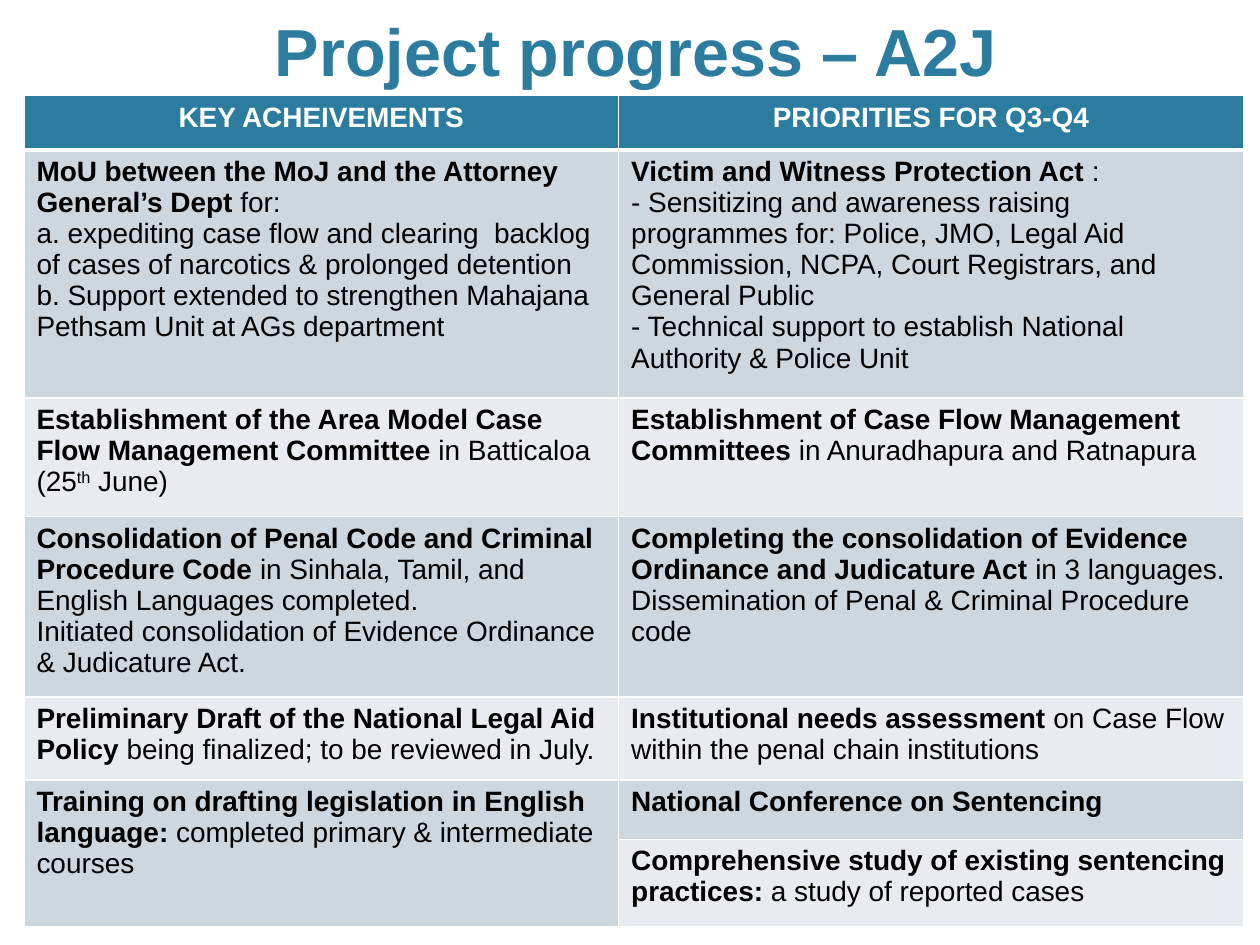
from collections import namedtuple

from lxml.etree import SubElement
from pptx import Presentation
from pptx.dml.color import RGBColor
from pptx.enum.text import MSO_ANCHOR, PP_ALIGN
from pptx.oxml.ns import qn
from pptx.util import Inches, Pt

Box = namedtuple("Box", "left top width height")

WIDTH, HEIGHT = Inches(10), Inches(7.5)
COLORS = {
    "accent": "2C7C9F",
    "dark_band": "CDD7DF",
    "light_band": "E8ECF0",
    "text": "000000",
    "white": "FFFFFF",
}

# Boxes in inches of the 10 by 7.5 grid
TITLE_BOX = Box(0.65, -0.03, 8.8, 0.79)
TABLE_BOX = Box(0.19, 0.76, 9.68, 6.59)
COLUMN_SHARES = (4.72, 4.96)
ROW_SHARES = (0.43, 1.97, 0.94, 1.43, 0.66, 0.47, 0.69)

TITLE_FORMAT = {"size": Pt(38), "bold": True, "name": "Arial"}
CELL_FORMAT = {"size": Pt(16), "name": "Arial"}

HEADINGS = ("KEY ACHEIVEMENTS", "PRIORITIES FOR Q3-Q4")
# Each cell is a list of paragraphs: *bold*, ^superscript^; None continues the cell above
ROWS = [
    (
        ["*MoU between the MoJ and the Attorney General’s Dept *for:",
         "a. expediting case flow and clearing  backlog of cases of narcotics & prolonged detention",
         "b. Support extended to strengthen Mahajana Pethsam Unit at AGs department"],
        ["*Victim and Witness Protection Act *:",
         "- Sensitizing and awareness raising programmes for: Police, JMO, Legal Aid "
         "Commission, NCPA, Court Registrars, and",
         "General Public",
         "- Technical support to establish National Authority & Police Unit"],
    ),
    (
        ["*Establishment of the Area Model Case*",
         "*Flow Management Committee *in Batticaloa (25^th^ June)"],
        ["*Establishment of Case Flow Management Committees *in Anuradhapura and Ratnapura"],
    ),
    (
        ["*Consolidation of Penal Code and Criminal Procedure Code *"
         "in Sinhala, Tamil, and English Languages completed.",
         "Initiated consolidation of Evidence Ordinance & Judicature Act."],
        ["*Completing the consolidation of Evidence Ordinance and Judicature Act *in 3 languages.",
         "Dissemination of Penal & Criminal Procedure code"],
    ),
    (
        ["*Preliminary Draft of the National Legal Aid Policy* being finalized; "
         "to be reviewed in July."],
        ["*Institutional needs assessment *on Case Flow within the penal chain institutions"],
    ),
    (
        ["*Training on drafting legislation in English language:* "
         "completed primary & intermediate courses"],
        ["*National Conference on Sentencing*"],
    ),
    (
        None,
        ["*Comprehensive study of existing sentencing practices:* a study of reported cases"],
    ),
]


def rgb(name):
    return RGBColor.from_string(COLORS[name])


def place(box):
    return [Inches(length) for length in box]


def add_span(para, text, color, formats):
    span = para.add_run()
    span.text = text
    span.font.color.rgb = rgb(color)
    for name, value in formats.items():
        setattr(span.font, name, value)
    return span


def add_marked_text(para, text, color):
    """Turn *bold* and ^superscript^ marks into formatted runs."""
    for bold_index, part in enumerate(text.split("*")):
        for raised_index, piece in enumerate(part.split("^")):
            if not piece:
                continue
            span = add_span(para, piece, color, {**CELL_FORMAT, "bold": bold_index % 2 == 1})
            if raised_index % 2:
                span._r.get_or_add_rPr().set("baseline", "30000")


def set_borders(cell, bottom):
    """Draw white cell edges; call before the fill, which must follow them."""
    properties = cell._tc.get_or_add_tcPr()
    for side, points in {"L": 1, "R": 1, "T": 1, "B": bottom}.items():
        line = SubElement(properties, qn(f"a:ln{side}"), w=str(Pt(points)))
        fill = SubElement(line, qn("a:solidFill"))
        SubElement(fill, qn("a:srgbClr"), val=COLORS["white"])


def fill_cell(cell, paragraphs, band, color="text", align=PP_ALIGN.LEFT, bottom=1):
    set_borders(cell, bottom)
    cell.fill.solid()
    cell.fill.fore_color.rgb = rgb(band)
    frame = cell.text_frame
    for index, text in enumerate(paragraphs):
        para = frame.add_paragraph() if index else frame.paragraphs[0]
        para.alignment = align
        add_marked_text(para, text, color)


def add_title(page, box):
    frame = page.shapes.add_textbox(*place(box)).text_frame
    frame.word_wrap = True
    frame.vertical_anchor = MSO_ANCHOR.BOTTOM
    para = frame.paragraphs[0]
    para.alignment = PP_ALIGN.CENTER
    add_span(para, "Project progress – A2J", "accent", TITLE_FORMAT)


def add_progress_table(page, box):
    table = page.shapes.add_table(len(ROW_SHARES), len(COLUMN_SHARES), *place(box)).table
    for column, share in zip(table.columns, COLUMN_SHARES):
        column.width = Inches(box.width * share / sum(COLUMN_SHARES))
    for row, share in zip(table.rows, ROW_SHARES):
        row.height = Inches(box.height * share / sum(ROW_SHARES))

    for column, heading in enumerate(HEADINGS):
        fill_cell(table.cell(0, column), [f"*{heading}*"], "accent", "white",
                  PP_ALIGN.CENTER, bottom=3)
    for row, contents in enumerate(ROWS, start=1):
        band = "dark_band" if row % 2 else "light_band"
        for column, paragraphs in enumerate(contents):
            cell = table.cell(row, column)
            if paragraphs is None:
                table.cell(row - 1, column).merge(cell)
            else:
                fill_cell(cell, paragraphs, band)


def main():
    deck = Presentation()
    deck.slide_width, deck.slide_height = WIDTH, HEIGHT
    page = deck.slides.add_slide(deck.slide_layouts[6])
    add_title(page, TITLE_BOX)
    add_progress_table(page, TABLE_BOX)
    deck.save("out.pptx")


if __name__ == "__main__":
    main()
